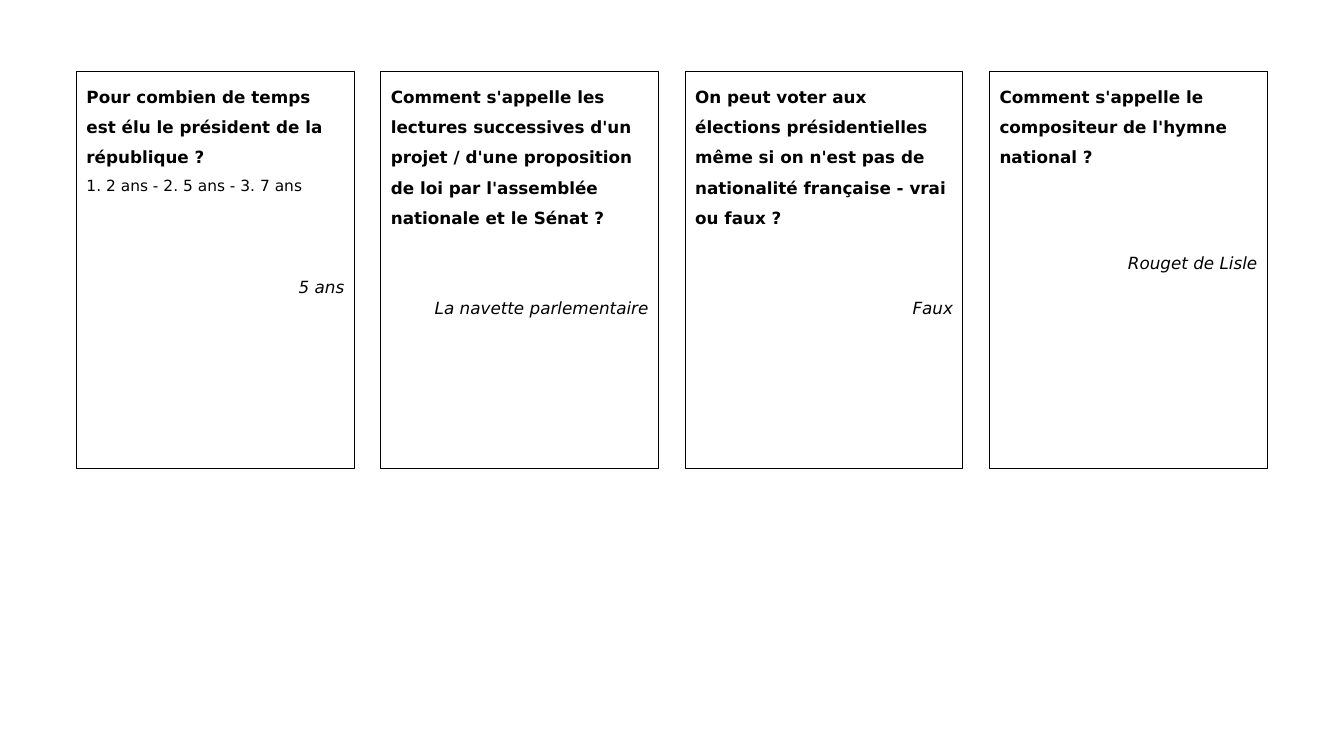
from pptx import Presentation
from pptx.dml.color import RGBColor
from pptx.enum.shapes import MSO_SHAPE
from pptx.enum.text import MSO_ANCHOR, PP_ALIGN
from pptx.util import Cm, Pt

RECTANGLE = MSO_SHAPE.RECTANGLE
TOP = MSO_ANCHOR.TOP
LEFT, RIGHT = PP_ALIGN.LEFT, PP_ALIGN.RIGHT

COLOURS = {"card": "FFFFFF", "ink": "000000"}
FORMATS = {
    "question": {"size": Pt(12), "bold": True, "italic": False},
    "choices": {"size": Pt(11), "bold": False, "italic": False},
    "answer": {"size": Pt(12), "bold": False, "italic": True},
}
FRAME = {
    "word_wrap": True,
    "vertical_anchor": TOP,
    "margin_left": Cm(0.25),
    "margin_right": Cm(0.25),
    "margin_top": Cm(0.13),
    "margin_bottom": Cm(0.13),
}
QUIZ = [
    ("Pour combien de temps est élu le président de la république ?",
     "1. 2 ans - 2. 5 ans - 3. 7 ans", "5 ans", 51.5),
    ("Comment s'appelle les lectures successives d'un projet / d'une "
     "proposition de loi par l'assemblée nationale et le Sénat ?",
     None, "La navette parlementaire", 43),
    ("On peut voter aux élections présidentielles même si on n'est pas de "
     "nationalité française - vrai ou faux ?", None, "Faux", 43),
    ("Comment s'appelle le compositeur de l'hymne national ?",
     None, "Rouget de Lisle", 54),
]
CARD_WIDTH, CARD_HEIGHT, CARD_GAP = 7, 10, 0.67


def colour(key):
    return RGBColor.from_string(COLOURS[key])


def apply(target, values):
    for attribute, value in values.items():
        setattr(target, attribute, value)


def write_line(paragraph, text, role, alignment=LEFT, gap=0):
    apply(paragraph, {"alignment": alignment, "line_spacing": 1.5,
                      "space_before": Pt(gap), "space_after": Pt(0)})
    run = paragraph.add_run()
    run.text = text
    apply(run.font, {"name": "DejaVu Sans", **FORMATS[role]})
    run.font.color.rgb = colour("ink")


def add_card(slide, left, top, width, height, entry):
    question, choices, answer, answer_gap = entry
    card = slide.shapes.add_shape(RECTANGLE, Cm(left), Cm(top), Cm(width), Cm(height))
    card.shadow.inherit = False
    card.fill.solid()
    card.fill.fore_color.rgb = colour("card")
    card.line.color.rgb = colour("ink")
    card.line.width = Pt(0.75)
    content = card.text_frame
    apply(content, FRAME)
    write_line(content.paragraphs[0], question, "question")
    if choices:
        write_line(content.add_paragraph(), choices, "choices")
    write_line(content.add_paragraph(), answer, "answer", RIGHT, answer_gap)


def add_card_row(slide, left, top):
    for column, entry in enumerate(QUIZ):
        card_left = left + column * (CARD_WIDTH + CARD_GAP)
        add_card(slide, card_left, top, CARD_WIDTH, CARD_HEIGHT, entry)


def main():
    deck = Presentation()
    deck.slide_width, deck.slide_height = Cm(33.87), Cm(19.05)
    slide = deck.slides.add_slide(deck.slide_layouts[6])
    add_card_row(slide, 1.93, 1.8)
    deck.save("out.pptx")


if __name__ == "__main__":
    main()
